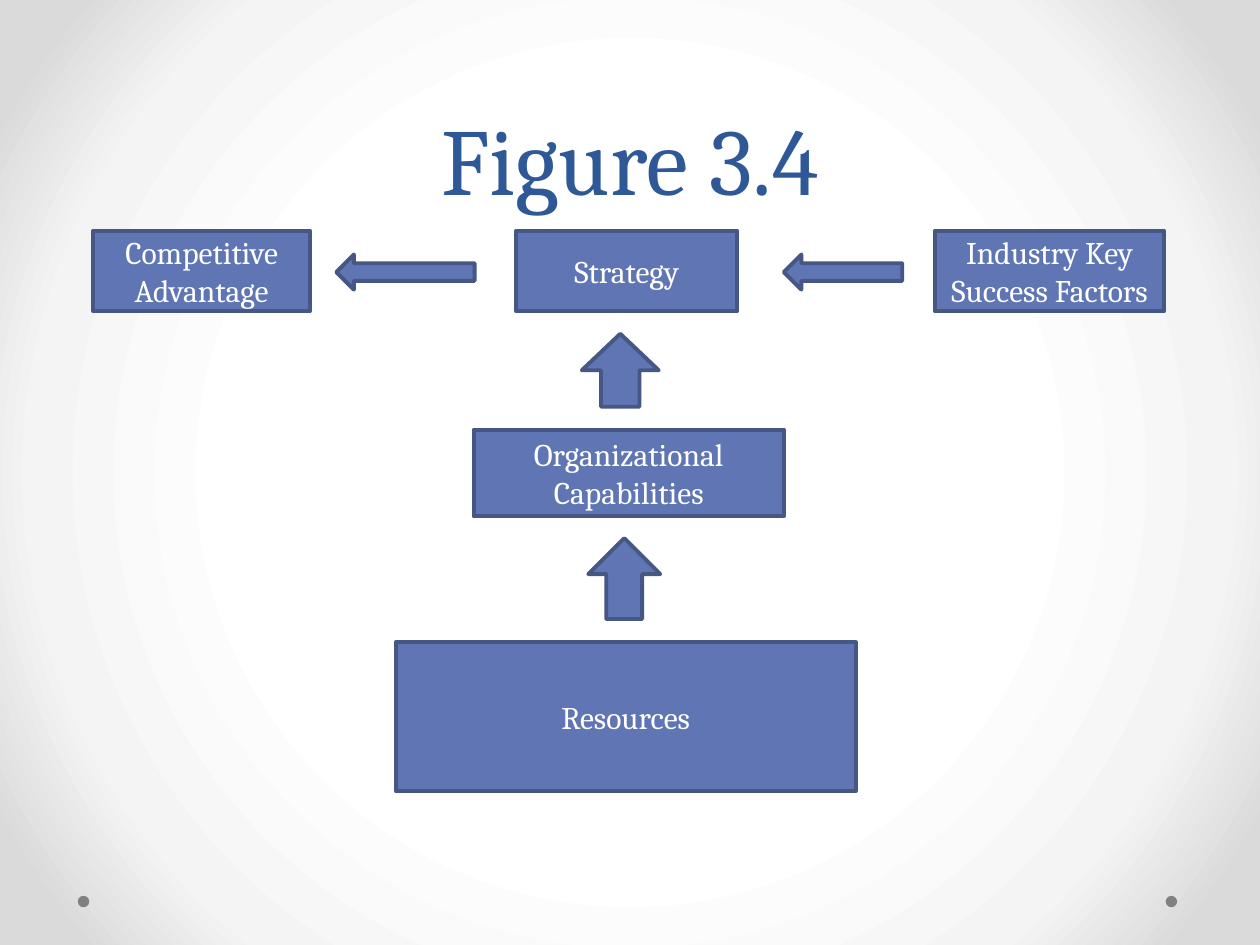
from lxml import etree
from pptx import Presentation
from pptx.dml.color import RGBColor
from pptx.enum.shapes import MSO_SHAPE as Shape
from pptx.enum.text import MSO_ANCHOR as Anchor, PP_ALIGN as Align
from pptx.oxml.ns import qn
from pptx.util import Cm, Pt

SLIDE_SIZE = (25.4, 19.05)
BACKGROUND_STOPS = [(50, "FFFFFF"), (76, "F4F4F4"), (92, "DADADA")]
TITLE = ("Figure 3.4", (1.27, 0, 22.86, 4.45))
TITLE_FONT = {"name": "Cambria", "size": Pt(54)}
BOX_FONT = {"name": "Cambria", "size": Pt(18)}
FILL, OUTLINE, DOT, TITLE_COLOR, WHITE = "6076B4", "475785", "808080", "2F5897", "FFFFFF"

# Left, top, width and height in centimetres
TOP_ROW, TOP_ROW_HEIGHT = 4.65, 1.63
BOXES = [
    ("Resources", Shape.FLOWCHART_PROCESS, (7.98, 12.95, 9.27, 3)),
    ("Organizational Capabilities", Shape.FLOWCHART_PROCESS, (9.55, 8.66, 6.25, 1.75)),
    ("Strategy", Shape.RECTANGLE, (10.41, TOP_ROW, 4.45, TOP_ROW_HEIGHT)),
    ("Industry Key Success Factors", Shape.RECTANGLE, (18.85, TOP_ROW, 4.62, TOP_ROW_HEIGHT)),
    ("Competitive Advantage", Shape.RECTANGLE, (1.88, TOP_ROW, 4.37, TOP_ROW_HEIGHT)),
]
ARROWS = [
    (Shape.UP_ARROW, (11.86, 10.85, 1.45, 1.63)),
    (Shape.UP_ARROW, (11.73, 6.73, 1.55, 1.47)),
    (Shape.LEFT_ARROW, (15.8, 5.13, 2.39, 0.71)),
    (Shape.LEFT_ARROW, (6.78, 5.13, 2.79, 0.71)),
]
DOT_LEFTS, DOT_TOP, DOT_SIZE = (23.5, 1.57), 18.06, 0.23


def color(value):
    return RGBColor.from_string(value)


def lengths(values):
    return [Cm(value) for value in values]


def set_radial_background(slide):
    slide.background.fill.gradient()
    gradient = slide.element.find(".//" + qn("a:gradFill"))
    for child in list(gradient):
        gradient.remove(child)
    stops = etree.SubElement(gradient, qn("a:gsLst"))
    for percent, value in BACKGROUND_STOPS:
        stop = etree.SubElement(stops, qn("a:gs"), pos=str(percent * 1000))
        etree.SubElement(stop, qn("a:srgbClr"), val=value)
    radial = etree.SubElement(gradient, qn("a:path"), path="circle")
    etree.SubElement(radial, qn("a:fillToRect"), l="50000", t="50000", r="50000", b="50000")


def add_shape(slide, kind, place, fill, outline=None):
    shape = slide.shapes.add_shape(kind, *lengths(place))
    shape.shadow.inherit = False
    shape.fill.solid()
    shape.fill.fore_color.rgb = color(fill)
    if outline:
        shape.line.color.rgb = color(outline)
        shape.line.width = Pt(2.25)
    else:
        shape.line.fill.background()
    return shape


def write(shape, text, font, font_color, anchor):
    """Put one centred paragraph into the shape and return it."""
    frame = shape.text_frame
    frame.word_wrap = True
    frame.vertical_anchor = anchor
    paragraph = frame.paragraphs[0]
    paragraph.alignment = Align.CENTER
    run = paragraph.add_run()
    run.text = text
    for name, value in font.items():
        setattr(run.font, name, value)
    run.font.color.rgb = color(font_color)
    return paragraph


def main():
    presentation = Presentation()
    presentation.slide_width, presentation.slide_height = lengths(SLIDE_SIZE)
    slide = presentation.slides.add_slide(presentation.slide_layouts[6])
    set_radial_background(slide)

    for left in DOT_LEFTS:
        add_shape(slide, Shape.OVAL, (left, DOT_TOP, DOT_SIZE, DOT_SIZE), DOT)

    title, place = TITLE
    title_box = slide.shapes.add_textbox(*lengths(place))
    write(title_box, title, TITLE_FONT, TITLE_COLOR, Anchor.BOTTOM).line_spacing = Pt(58)

    for text, kind, place in BOXES:
        box = add_shape(slide, kind, place, FILL, OUTLINE)
        write(box, text, BOX_FONT, WHITE, Anchor.MIDDLE)
    for kind, place in ARROWS:
        add_shape(slide, kind, place, FILL, OUTLINE)

    presentation.save("out.pptx")


if __name__ == "__main__":
    main()
